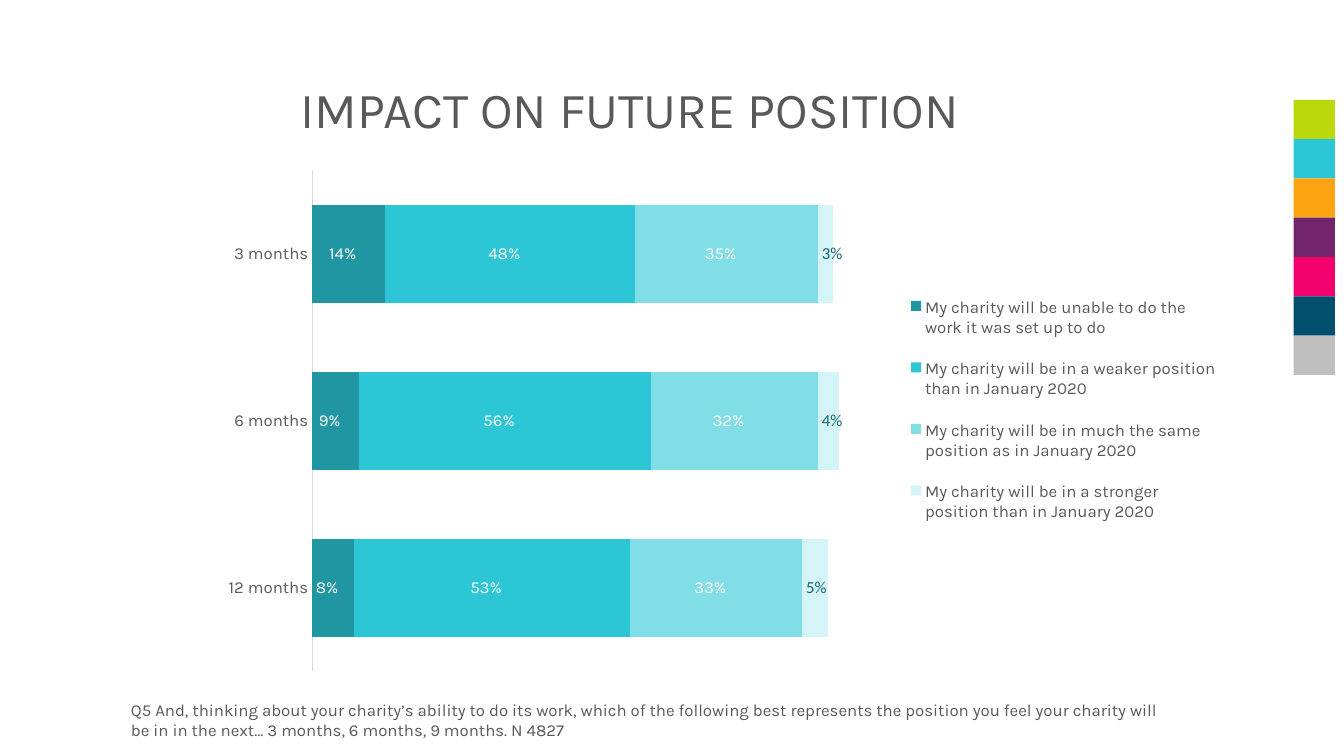
from dataclasses import dataclass

from lxml.etree import SubElement
from pptx import Presentation
from pptx.chart.chart import Chart
from pptx.chart.data import CategoryChartData
from pptx.chart.series import BarSeries
from pptx.dml.color import RGBColor
from pptx.enum.chart import (
    XL_CHART_TYPE,
    XL_LABEL_POSITION,
    XL_LEGEND_POSITION,
    XL_TICK_LABEL_POSITION,
    XL_TICK_MARK,
)
from pptx.enum.shapes import MSO_SHAPE
from pptx.enum.text import MSO_ANCHOR, MSO_AUTO_SIZE, PP_ALIGN
from pptx.oxml.ns import qn
from pptx.slide import Slide
from pptx.text.text import Font, TextFrame
from pptx.util import Emu, Pt

EMU_PER_PX = 9144
PERCENT_FORMAT = "0%" + r"\ " * 3


@dataclass(frozen=True)
class Theme:
    font: str = "Karla"
    stronger_font: str = "Calibri"
    text: str = "595959"
    axis: str = "D9D9D9"
    white: str = "FFFFFF"
    dark_teal: str = "15646C"
    title_size: int = 36
    body_size: int = 12
    swatches: tuple[str, ...] = (
        "BAD80A", "2DC6D6", "FCA311", "72246C", "F2006E", "004F6D", "BFBFBF",
    )


@dataclass(frozen=True)
class Box:
    left: int
    top: int
    width: int
    height: int

    def emu(self) -> tuple[Emu, Emu, Emu, Emu]:
        return px(self.left), px(self.top), px(self.width), px(self.height)


@dataclass(frozen=True)
class Outlook:
    statement: str
    shares: tuple[float, ...]
    fill: str
    label_color: str
    label_font: str
    label_position: XL_LABEL_POSITION


THEME = Theme()
PERIODS = ("3 months", "6 months", "12 months")
OUTLOOKS = (
    Outlook("My charity will be unable to do the work it was set up to do",
            (0.14, 0.09, 0.08), "2096A3", THEME.white, THEME.font,
            XL_LABEL_POSITION.CENTER),
    Outlook("My charity will be in a weaker position than in January 2020",
            (0.48, 0.56, 0.53), "2DC6D6", THEME.white, THEME.font,
            XL_LABEL_POSITION.CENTER),
    Outlook("My charity will be in much the same position as in January 2020",
            (0.35, 0.32, 0.33), "81DDE6", THEME.white, THEME.font,
            XL_LABEL_POSITION.CENTER),
    Outlook("My charity will be in a stronger position than in January 2020",
            (0.03, 0.04, 0.05), "D5F4F7", THEME.dark_teal, THEME.stronger_font,
            XL_LABEL_POSITION.INSIDE_BASE),
)
QUESTION = (
    "Q5 And, thinking about your charity’s ability to do its work, which of the "
    "following best represents the position you feel your charity will be in in "
    "the next… 3 months, 6 months, 9 months. N 4827"
)


def px(length: int) -> Emu:
    return Emu(length * EMU_PER_PX)


def style_font(font: Font, size: int, color: str, name: str = THEME.font) -> None:
    font.size = Pt(size)
    font.name = name
    font.bold = False
    font.color.rgb = RGBColor.from_string(color)


def write(frame: TextFrame, wording: str, size: int) -> None:
    frame.word_wrap = True
    frame.auto_size = MSO_AUTO_SIZE.NONE
    paragraph = frame.paragraphs[0]
    paragraph.alignment = PP_ALIGN.LEFT
    run = paragraph.add_run()
    run.text = wording
    style_font(run.font, size, THEME.text)


def draw_swatches(slide: Slide, first: Box) -> None:
    for row, color in enumerate(THEME.swatches):
        place = Box(first.left, first.top + row * first.height, first.width, first.height)
        swatch = slide.shapes.add_shape(MSO_SHAPE.RECTANGLE, *place.emu())
        swatch.shadow.inherit = False
        swatch.fill.solid()
        swatch.fill.fore_color.rgb = RGBColor.from_string(color)
        swatch.line.fill.background()


def draw_title(slide: Slide, place: Box) -> None:
    title = slide.shapes.title
    title.left, title.top, title.width, title.height = place.emu()
    title.text_frame.vertical_anchor = MSO_ANCHOR.MIDDLE
    write(title.text_frame, "IMPACT ON FUTURE POSITION", THEME.title_size)
    title.text_frame.paragraphs[0].line_spacing = 0.9


def set_layout(owner, settings: dict[str, str | float]) -> None:
    layout = owner.find(qn("c:layout"))
    if layout is None:
        layout = SubElement(owner, qn("c:layout"))
        owner.remove(layout)
        anchor = owner.find(qn("c:legendPos"))
        if anchor is None:
            owner.insert(0, layout)
        else:
            anchor.addnext(layout)
    manual = SubElement(layout, qn("c:manualLayout"))
    for tag, value in settings.items():
        SubElement(manual, qn(f"c:{tag}")).set("val", str(value))


def style_series(series: BarSeries, outlook: Outlook) -> None:
    series.format.fill.solid()
    series.format.fill.fore_color.rgb = RGBColor.from_string(outlook.fill)
    series.invert_if_negative = False
    labels = series.data_labels
    labels.show_value = True
    labels.number_format = PERCENT_FORMAT
    labels.number_format_is_linked = False
    labels.position = outlook.label_position
    style_font(labels.font, THEME.body_size, outlook.label_color, outlook.label_font)


def style_axes(chart: Chart) -> None:
    periods = chart.category_axis
    periods.reverse_order = True
    periods.major_tick_mark = XL_TICK_MARK.NONE
    periods.format.line.color.rgb = RGBColor.from_string(THEME.axis)
    periods.format.line.width = Pt(0.75)
    style_font(periods.tick_labels.font, THEME.body_size, THEME.text)
    shares = chart.value_axis
    shares.minimum_scale, shares.maximum_scale = 0, 1.2
    shares.has_major_gridlines = False
    shares.tick_label_position = XL_TICK_LABEL_POSITION.NONE
    shares.visible = False


def draw_chart(slide: Slide, place: Box) -> None:
    data = CategoryChartData(number_format="0%")
    data.categories = PERIODS
    for outlook in OUTLOOKS:
        data.add_series(outlook.statement, outlook.shares)
    chart = slide.shapes.add_chart(XL_CHART_TYPE.BAR_STACKED, *place.emu(), data).chart
    chart.has_title = False
    style_font(chart.font, THEME.body_size, THEME.text)
    plot = chart.plots[0]
    plot.gap_width, plot.overlap = 70, 100
    plot.vary_by_categories = False
    for series, outlook in zip(plot.series, OUTLOOKS):
        style_series(series, outlook)
    style_axes(chart)
    chart.has_legend = True
    chart.legend.position = XL_LEGEND_POSITION.RIGHT
    chart.legend.include_in_layout = False
    style_font(chart.legend.font, THEME.body_size, THEME.text)
    edges = {"xMode": "edge", "yMode": "edge"}
    plot_area = chart.plots[0]._element.getparent()
    set_layout(plot_area, {"layoutTarget": "inner", **edges,
                           "x": 0.174, "y": 0.023, "w": 0.563, "h": 0.936})
    set_layout(chart.legend._element, {**edges, "x": 0.71, "y": 0.22, "w": 0.28, "h": 0.5})


def draw_question(slide: Slide, place: Box) -> None:
    question = slide.shapes.add_textbox(*place.emu())
    write(question.text_frame, QUESTION, THEME.body_size)


def main() -> None:
    deck = Presentation()
    deck.slide_width, deck.slide_height = px(1333), px(750)
    slide = deck.slides.add_slide(deck.slide_layouts.get_by_name("Title Only"))
    draw_swatches(slide, Box(1283, 99, 41, 39))
    draw_title(slide, Box(288, 39, 709, 145))
    draw_chart(slide, Box(118, 157, 1102, 531))
    draw_question(slide, Box(120, 689, 1046, 50))
    deck.save("out.pptx")


if __name__ == "__main__":
    main()
